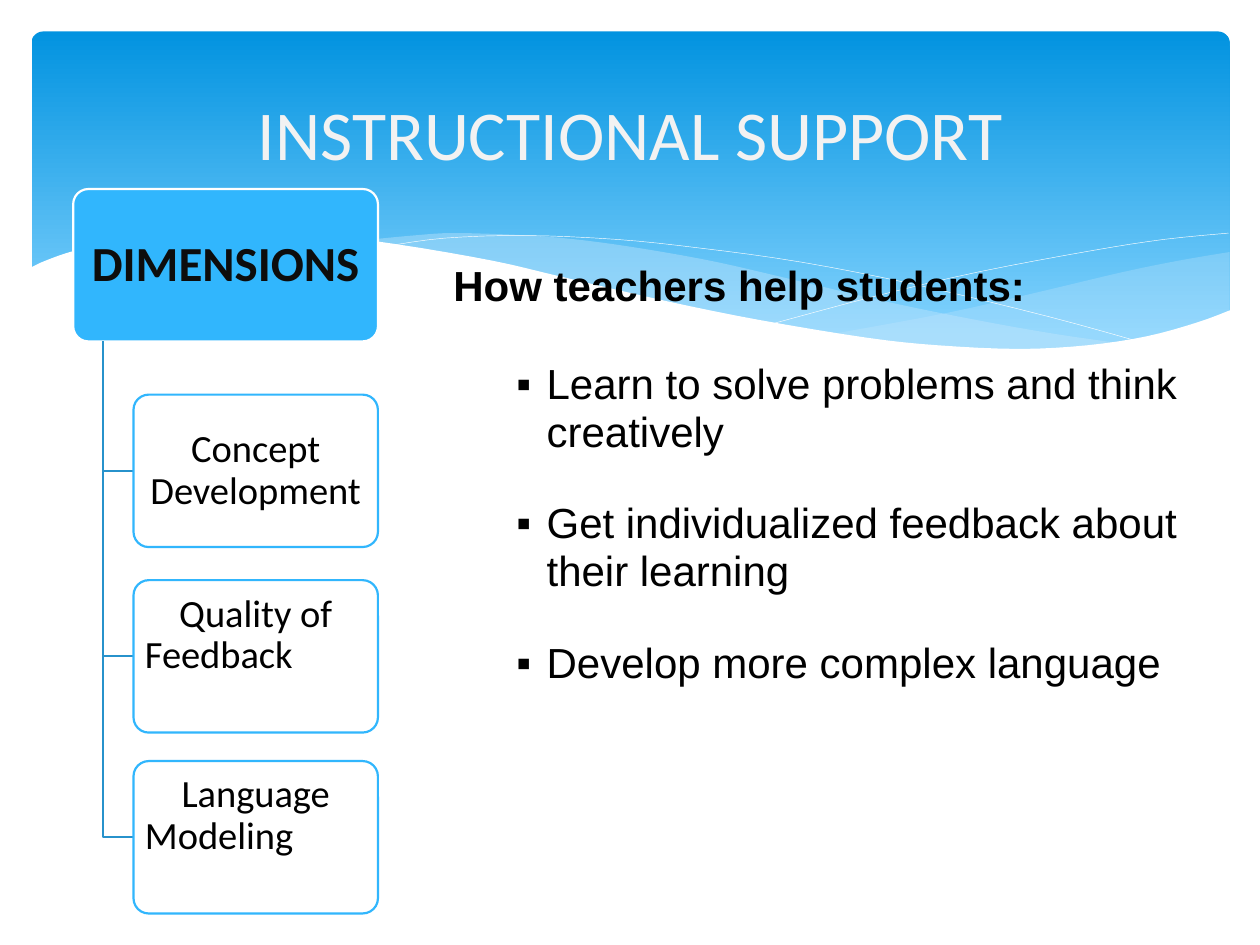
import pptx
import pptx.util
from lxml import etree
from pptx.dml.color import RGBColor
from pptx.enum.shapes import MSO_SHAPE
from pptx.enum.text import MSO_ANCHOR, PP_ALIGN
from pptx.oxml.ns import qn

Pt = pptx.util.Pt

WHITE = RGBColor(0xFF, 0xFF, 0xFF)
BLACK = RGBColor(0, 0, 0)
TITLE_GRAY = RGBColor(0xF2, 0xF2, 0xF2)
HEADER_TEXT = RGBColor(0x0D, 0x0D, 0x0D)
SKY_TOP = RGBColor(0x02, 0x93, 0xE0)
SKY_BOTTOM = RGBColor(0x83, 0xD3, 0xFE)
MIST = RGBColor(0xC6, 0xE7, 0xFC)
BRIGHT_BLUE = RGBColor(0x31, 0xB6, 0xFD)
BRANCH_BLUE = RGBColor(0x27, 0x92, 0xCB)

TITLE = "INSTRUCTIONAL SUPPORT"
HEADING = "How teachers help students:"
GOALS = [
    "Learn to solve problems and think creatively",
    "Get individualized feedback about their learning",
    "Develop more complex language",
]
HEADER = "DIMENSIONS"
# Top of the box, lines with their alignment, inset below the text
DIMENSIONS = [
    (225.5, [("Concept Development", PP_ALIGN.CENTER)], 3),
    (331.5, [("Quality of", PP_ALIGN.CENTER), ("Feedback", PP_ALIGN.LEFT)], 27),
    (434.9, [("Language", PP_ALIGN.CENTER), ("Modeling", PP_ALIGN.LEFT)], 27),
]

# Each wave is a run of smooth edges, given by the knots they pass through
RIGHT_WAVE = [
    [(702.7, 144), (673.2, 149), (641.5, 155.5), (599, 165.6), (542.2, 178.6),
     (475.9, 190.8)],
    [(475.9, 190.8), (507.6, 195.1), (545, 198.7), (578.2, 200.2), (614.9, 198.7),
     (645.8, 194.4), (673.2, 188.6), (702.7, 177.8)],
]
MIDDLE_WAVE = [
    [(643, 196.6), (602.6, 190.8), (558, 182.9), (508.3, 172.8), (452.9, 159.8),
     (409.7, 149.8), (370.1, 142.6), (334.8, 137.5), (302.4, 134.6), (259.9, 133.2),
     (236.2, 134.6), (205.9, 137.5)],
    [(205.9, 137.5), (246.2, 143.3), (290.9, 151.9), (323.3, 159.8), (381.6, 172.8),
     (432.7, 183.6), (478.8, 191.5), (519.8, 197.3), (556.6, 199.4), (589, 200.2),
     (617, 199.4), (643, 196.6)],
]
LONG_STRAND = [
    [(222.5, 140.4), (254.2, 136.1), (299.5, 134.6), (352.1, 136.8), (400.3, 141.8),
     (457.9, 149.8), (523.4, 162.7), (598.3, 180.7), (653, 195.8)],
]
SHORT_STRAND = [
    [(441.4, 185), (500.4, 169.2), (558.7, 155.5), (623.5, 143.3), (665.3, 136.8),
     (702, 133.2)],
]
WHITE_WAVE = [
    [(16.6, 153.4), (25.9, 149), (42.5, 143.3), (68.4, 137.5), (105.1, 133.2),
     (139, 132.5), (180, 133.9), (227.5, 139.7), (281.5, 149), (321.8, 158.4),
     (380.9, 172.1), (434.2, 182.9), (495.4, 193), (535.7, 197.3), (582.5, 199.4),
     (621.4, 197.3), (655.2, 192.2), (684, 184.3), (703.4, 177.1)],
    [(703.4, 236.9), (16.6, 236.9)],
]

HEADER_BOX = (41.8, 108, 174.2, 87.1)
CHILD_LEFT, CHILD_WIDTH, CHILD_HEIGHT = 76.3, 139.7, 87.1
SPINE_X = 59


def smooth(knots, steps=4):
    """Return points on a Catmull-Rom curve through the knots."""
    ends = [knots[0], *knots, knots[-1]]
    points = [knots[0]]
    for a, b, c, d in zip(ends, ends[1:], ends[2:], ends[3:]):
        for step in range(1, steps + 1):
            t = step / steps
            points.append(tuple(
                0.5 * (2 * q + (r - p) * t + (2 * p - 5 * q + 4 * r - s) * t ** 2
                       + (3 * q - p - 3 * r + s) * t ** 3)
                for p, q, r, s in zip(a, b, c, d)))
    return points


def paint(shape, fill=None, line=None, width=1.25, alpha=None):
    shape.shadow.inherit = False
    if fill is None:
        shape.fill.background()
    else:
        shape.fill.solid()
        shape.fill.fore_color.rgb = fill
    if alpha is not None:
        color = shape._element.spPr.find(qn("a:solidFill"))[0]
        etree.SubElement(color, qn("a:alpha"), val=str(alpha * 1000))
    if line is None:
        shape.line.fill.background()
    else:
        shape.line.color.rgb = line
        shape.line.width = Pt(width)


def add_outline(shapes, points, close, **look):
    hundredths = [(x * 100, y * 100) for x, y in points]
    builder = shapes.build_freeform(*hundredths[0], scale=Pt(0.01))
    builder.add_line_segments(hundredths[1:], close=close)
    paint(builder.convert_to_shape(), **look)


def add_wave(shapes, edges, close=True, **look):
    add_outline(shapes, [p for edge in edges for p in smooth(edge)], close, **look)


def add_round_box(shapes, box, corner):
    shape = shapes.add_shape(MSO_SHAPE.ROUNDED_RECTANGLE, *map(Pt, box))
    shape.adjustments[0] = corner
    return shape


def set_frame(frame, insets, anchor):
    left, top, right, bottom = map(Pt, insets)
    settings = {"margin_left": left, "margin_top": top, "margin_right": right,
                "margin_bottom": bottom, "vertical_anchor": anchor, "word_wrap": True}
    for name, value in settings.items():
        setattr(frame, name, value)


def write(frame, lines, size, color, font="Calibri", bold=False, spacing=0.9):
    """Write (text, alignment) lines as paragraphs and return them."""
    paragraphs = []
    for number, (text, alignment) in enumerate(lines):
        paragraph = frame.add_paragraph() if number else frame.paragraphs[0]
        paragraph.alignment = alignment
        paragraph.line_spacing = spacing
        run = paragraph.add_run()
        run.text = text
        for name, value in {"size": Pt(size), "name": font, "bold": bold}.items():
            setattr(run.font, name, value)
        run.font.color.rgb = color
        paragraphs.append(paragraph)
    return paragraphs


def add_backdrop(shapes):
    sky = add_round_box(shapes, (18, 18, 684.7, 194.4), 0.034)
    paint(sky)
    sky.fill.gradient()
    sky.fill.gradient_angle = 270
    for stop, color, position in zip(sky.fill.gradient_stops, (SKY_TOP, SKY_BOTTOM), (0, 0.9)):
        stop.color.rgb = color
        stop.position = position
    add_wave(shapes, RIGHT_WAVE, fill=MIST, alpha=29)
    add_wave(shapes, MIDDLE_WAVE, fill=MIST, alpha=40)
    for strand in (LONG_STRAND, SHORT_STRAND):
        add_wave(shapes, strand, close=False, line=WHITE, width=0.25)
    add_wave(shapes, WHITE_WAVE, fill=WHITE)


def add_title(slide):
    title = slide.shapes.title
    slide.shapes._spTree.append(title._element)
    for name, value in zip(("left", "top", "width", "height"), (36, 26.6, 648, 98.6)):
        setattr(title, name, Pt(value))
    set_frame(title.text_frame, (7.2, 3.6, 7.2, 3.6), MSO_ANCHOR.MIDDLE)
    write(title.text_frame, [(TITLE, PP_ALIGN.CENTER)], 40, TITLE_GRAY, spacing=1)


def add_goals(shapes):
    frame = shapes.add_textbox(*map(Pt, (252, 146.9, 432, 242.6))).text_frame
    set_frame(frame, (7.2, 3.6, 7.2, 3.6), MSO_ANCHOR.TOP)
    lines = [(text, PP_ALIGN.LEFT) for text in (HEADING, *GOALS)]
    heading, *goals = write(frame, lines, 24, BLACK, font="Arial", spacing=0.95)
    heading.runs[0].font.bold = True
    heading.space_after = Pt(3.5)
    for goal in goals:
        goal.space_before = Pt(25)
        properties = goal._p.get_or_add_pPr()
        properties.set("marL", str(Pt(53.3)))
        properties.set("indent", str(Pt(-17.3)))
        etree.SubElement(properties, qn("a:buFont"), typeface="Arial")
        etree.SubElement(properties, qn("a:buChar"), char="▪")


def add_dimensions(shapes):
    header = add_round_box(shapes, HEADER_BOX, 0.1)
    paint(header, fill=BRIGHT_BLUE, line=WHITE)
    set_frame(header.text_frame, (4, 3, 4, 3), MSO_ANCHOR.MIDDLE)
    write(header.text_frame, [(HEADER, PP_ALIGN.CENTER)], 28, HEADER_TEXT, bold=True)
    spine_top = HEADER_BOX[1] + HEADER_BOX[3]
    for top, lines, inset_below in DIMENSIONS:
        middle = top + CHILD_HEIGHT / 2
        branch = [(SPINE_X, spine_top), (SPINE_X, middle), (CHILD_LEFT, middle)]
        add_outline(shapes, branch, close=False, line=BRANCH_BLUE)
        child = add_round_box(shapes, (CHILD_LEFT, top, CHILD_WIDTH, CHILD_HEIGHT), 0.1)
        paint(child, fill=WHITE, line=BRIGHT_BLUE, alpha=90)
        set_frame(child.text_frame, (4, 3, 4, inset_below), MSO_ANCHOR.MIDDLE)
        write(child.text_frame, lines, 22, BLACK)


def main():
    deck = pptx.Presentation()
    deck.slide_width, deck.slide_height = Pt(720), Pt(540)
    slide = deck.slides.add_slide(deck.slide_layouts[5])
    add_backdrop(slide.shapes)
    add_title(slide)
    add_goals(slide.shapes)
    add_dimensions(slide.shapes)
    deck.save("out.pptx")


if __name__ == "__main__":
    main()
